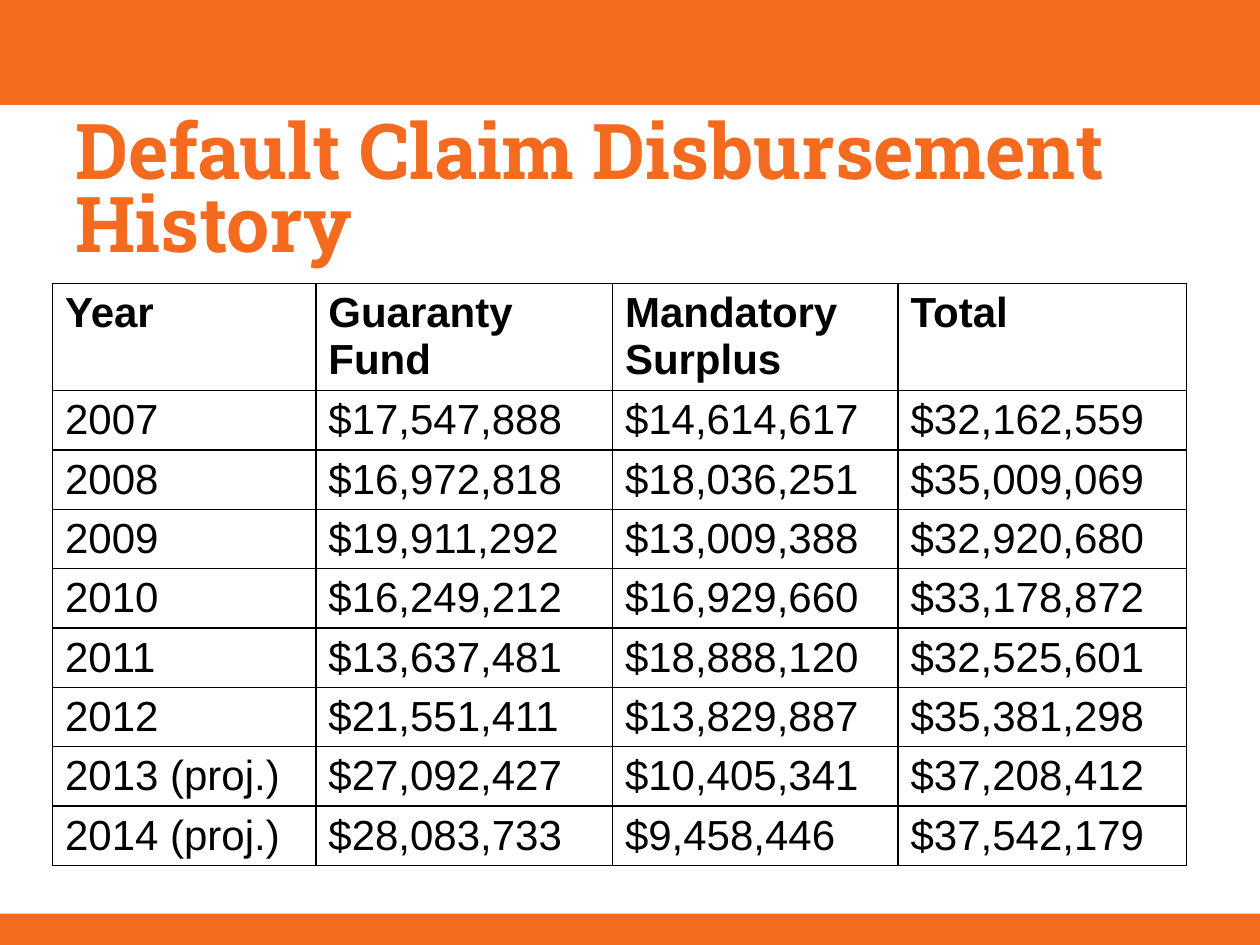
from dataclasses import dataclass

from lxml.etree import SubElement
from pptx import Presentation
from pptx.dml.color import RGBColor
from pptx.enum.shapes import MSO_SHAPE
from pptx.enum.text import MSO_ANCHOR
from pptx.oxml.ns import qn
from pptx.slide import Slide
from pptx.table import _Cell
from pptx.text.text import _Paragraph
from pptx.util import Pt

ORANGE = "F46A1F"
BLACK = "000000"
COLUMN_WIDTHS = (150.5, 169.5, 163.2, 164.8)
HEADER_HEIGHT = 61.2
ROW_HEIGHT = 33.92
ROWS = (
    ("Year", "Guaranty Fund", "Mandatory Surplus", "Total"),
    ("2007", "$17,547,888", "$14,614,617", "$32,162,559"),
    ("2008", "$16,972,818", "$18,036,251", "$35,009,069"),
    ("2009", "$19,911,292", "$13,009,388", "$32,920,680"),
    ("2010", "$16,249,212", "$16,929,660", "$33,178,872"),
    ("2011", "$13,637,481", "$18,888,120", "$32,525,601"),
    ("2012", "$21,551,411", "$13,829,887", "$35,381,298"),
    ("2013 (proj.)", "$27,092,427", "$10,405,341", "$37,208,412"),
    ("2014 (proj.)", "$28,083,733", "$9,458,446", "$37,542,179"),
)


@dataclass(frozen=True)
class Band:
    top: float
    height: float


@dataclass(frozen=True)
class TextStyle:
    font: str
    size: float
    color: str
    bold: bool = False


BANDS = (Band(0, 60), Band(522, 18))
TITLE = TextStyle("Roboto Slab", 44, ORANGE, True)
HEADER = TextStyle("Arial", 24, BLACK, True)
BODY = TextStyle("Arial", 24, BLACK)


def color(value: str) -> RGBColor:
    return RGBColor.from_string(value)


def add_span(para: _Paragraph, text: str, style: TextStyle) -> None:
    span = para.add_run()
    span.text = text
    span.font.name = style.font
    span.font.size = Pt(style.size)
    span.font.bold = style.bold
    span.font.color.rgb = color(style.color)


def add_band(page: Slide, band: Band) -> None:
    shape = page.shapes.add_shape(
        MSO_SHAPE.RECTANGLE, Pt(0), Pt(band.top), Pt(720), Pt(band.height)
    )
    shape.shadow.inherit = False
    shape.fill.solid()
    shape.fill.fore_color.rgb = color(ORANGE)
    shape.line.fill.background()


def add_title(page: Slide, text: str) -> None:
    box = page.shapes.add_textbox(Pt(36), Pt(66.24), Pt(648), Pt(90))
    frame = box.text_frame
    frame.word_wrap = True
    frame.vertical_anchor = MSO_ANCHOR.MIDDLE
    para = frame.paragraphs[0]
    para.line_spacing = Pt(42)
    add_span(para, text, TITLE)


def add_borders(cell: _Cell) -> None:
    """Draw the four cell borders, which must precede the cell's fill."""
    properties = cell._tc.get_or_add_tcPr()
    for side in ("lnL", "lnR", "lnT", "lnB"):
        line = SubElement(properties, qn(f"a:{side}"), w=str(Pt(1)))
        fill = SubElement(line, qn("a:solidFill"))
        SubElement(fill, qn("a:srgbClr"), val=BLACK)


def add_history(page: Slide) -> None:
    height = HEADER_HEIGHT + ROW_HEIGHT * (len(ROWS) - 1)
    table = page.shapes.add_table(
        len(ROWS), len(COLUMN_WIDTHS), Pt(30), Pt(162),
        Pt(sum(COLUMN_WIDTHS)), Pt(height),
    ).table
    table.first_row = False
    table.horz_banding = False
    for column, width in zip(table.columns, COLUMN_WIDTHS):
        column.width = Pt(width)
    for row_index, values in enumerate(ROWS):
        style = BODY if row_index else HEADER
        table.rows[row_index].height = Pt(ROW_HEIGHT if row_index else HEADER_HEIGHT)
        for column_index, text in enumerate(values):
            cell = table.cell(row_index, column_index)
            add_borders(cell)
            cell.fill.background()
            cell.margin_bottom = Pt(0)
            add_span(cell.text_frame.paragraphs[0], text, style)


def main() -> None:
    deck = Presentation()
    deck.slide_width, deck.slide_height = Pt(720), Pt(540)
    page = deck.slides.add_slide(deck.slide_layouts[6])
    for band in BANDS:
        add_band(page, band)
    add_title(page, "Default Claim Disbursement History")
    add_history(page)
    deck.save("out.pptx")


if __name__ == "__main__":
    main()
